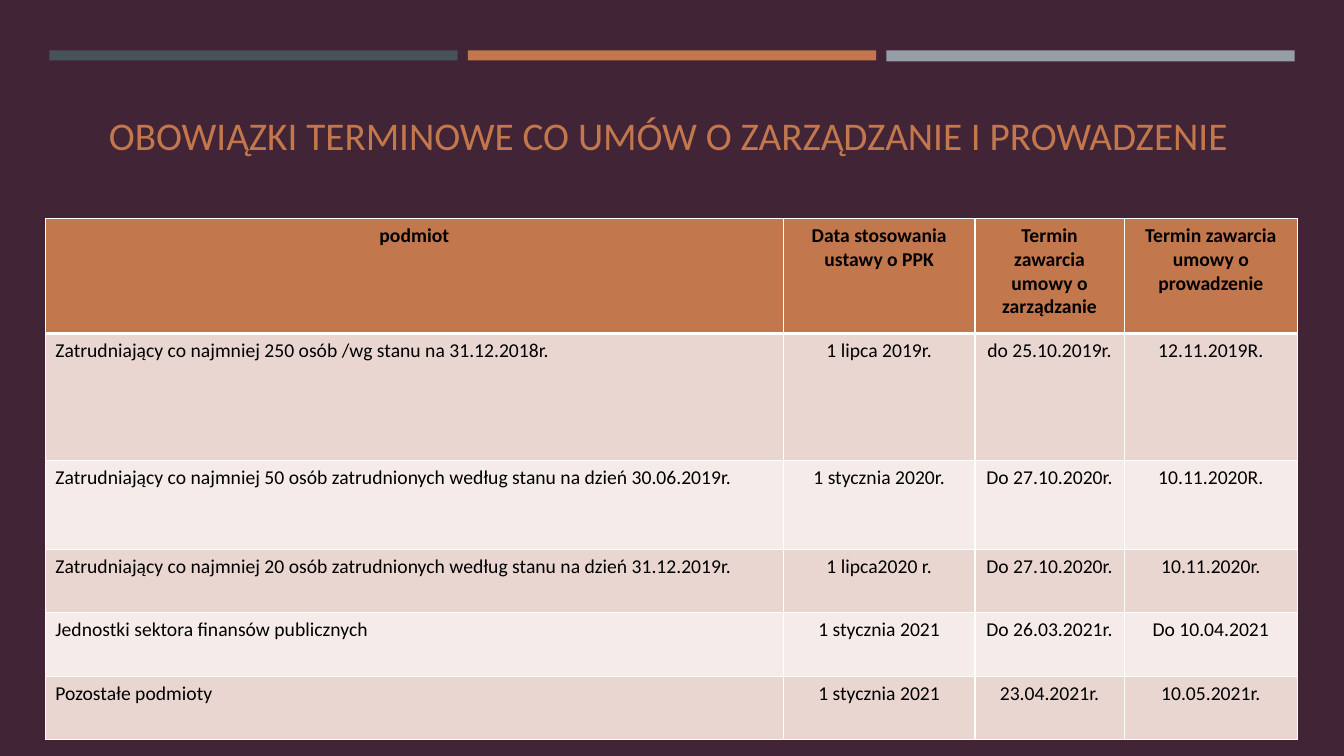
from dataclasses import dataclass

from lxml.etree import SubElement
from pptx import Presentation
from pptx.dml.color import RGBColor
from pptx.enum.shapes import MSO_SHAPE as Shape
from pptx.enum.text import MSO_ANCHOR as Anchor, PP_ALIGN as Align
from pptx.oxml.ns import qn
from pptx.util import Inches, Pt

PLUM = RGBColor(0x41, 0x24, 0x35)
TEAL = RGBColor(0x46, 0x53, 0x59)
RUST = RGBColor(0xC3, 0x77, 0x4D)
GREY = RGBColor(0x96, 0x9F, 0xA7)
ROSE = RGBColor(0xE9, 0xD6, 0xD0)
PALE = RGBColor(0xF5, 0xEC, 0xE9)
BLACK = RGBColor(0, 0, 0)
WHITE = RGBColor(0xFF, 0xFF, 0xFF)


@dataclass
class Bar:
    color: RGBColor
    height: float


@dataclass
class Row:
    height: float
    cells: tuple[str, ...]


BARS = [Bar(TEAL, 0.1), Bar(RUST, 0.1), Bar(GREY, 0.11)]
BAR_LEFT, BAR_TOP, BAR_WIDTH, BAR_STEP = 0.49, 0.5, 4.05, 4.15

COLS = [7.32, 1.9, 1.48, 1.72]
ROWS = [
    Row(1.14, ("podmiot", "Data stosowania ustawy o PPK",
               "Termin zawarcia umowy o zarządzanie",
               "Termin zawarcia umowy o prowadzenie")),
    Row(1.26, ("Zatrudniający co najmniej 250 osób /wg stanu na 31.12.2018r.",
               "1 lipca 2019r.", "do 25.10.2019r.", "12.11.2019R.")),
    Row(0.88, ("Zatrudniający co najmniej 50 osób zatrudnionych "
               "według stanu na dzień 30.06.2019r.",
               "1 stycznia 2020r.", "Do 27.10.2020r.", "10.11.2020R.")),
    Row(0.63, ("Zatrudniający co najmniej 20 osób zatrudnionych "
               "według stanu na dzień 31.12.2019r.",
               "1 lipca2020 r.", "Do 27.10.2020r.", "10.11.2020r.")),
    Row(0.63, ("Jednostki sektora finansów publicznych",
               "1 stycznia 2021", "Do 26.03.2021r.", "Do 10.04.2021")),
    Row(0.63, ("Pozostałe podmioty",
               "1 stycznia 2021", "23.04.2021r.", "10.05.2021r.")),
]


def write(frame, text: str, *, size: float, color: RGBColor,
          bold: bool = False, align=Align.CENTER) -> None:
    frame.word_wrap = True
    par = frame.paragraphs[0]
    par.alignment = align
    run = par.add_run()
    run.text = text
    font = run.font
    font.name, font.size, font.bold = "Calibri", Pt(size), bold
    font.color.rgb = color


def draw_bar(slide, bar: Bar, left: float) -> None:
    box = slide.shapes.add_shape(
        Shape.RECTANGLE, Inches(left), Inches(BAR_TOP),
        Inches(BAR_WIDTH), Inches(bar.height))
    box.shadow.inherit = False
    box.fill.solid()
    box.fill.fore_color.rgb = bar.color
    box.line.fill.background()


def set_edge(cell, side: str, width: float) -> None:
    line = SubElement(cell._tc.get_or_add_tcPr(), qn(f"a:ln{side}"),
                      w=str(Pt(width)))
    fill = SubElement(line, qn("a:solidFill"))
    SubElement(fill, qn("a:srgbClr"), val=str(WHITE))


def draw_table(slide, left: float, top: float) -> None:
    frame = slide.shapes.add_table(
        len(ROWS), len(COLS), Inches(left), Inches(top),
        Inches(sum(COLS)), Inches(sum(row.height for row in ROWS)))
    table = frame.table
    for col, width in zip(table.columns, COLS):
        col.width = Inches(width)
    for r, row in enumerate(ROWS):
        table.rows[r].height = Inches(row.height)
        head = r == 0
        for c, text in enumerate(row.cells):
            cell = table.cell(r, c)
            # Edges come before the fill in the cell's properties
            for side in "LRTB":
                thick = (head and side == "B") or (r == 1 and side == "T")
                set_edge(cell, side, 3 if thick else 1)
            cell.fill.solid()
            cell.fill.fore_color.rgb = RUST if head else ROSE if r % 2 else PALE
            write(cell.text_frame, text, size=14, color=BLACK, bold=head,
                  align=Align.CENTER if head or c else Align.LEFT)


def main() -> None:
    deck = Presentation()
    deck.slide_width, deck.slide_height = Inches(13.33), Inches(7.5)
    slide = deck.slides.add_slide(deck.slide_layouts[5])
    slide.background.fill.solid()
    slide.background.fill.fore_color.rgb = PLUM

    # Bars along the top
    for i, bar in enumerate(BARS):
        draw_bar(slide, bar, BAR_LEFT + i * BAR_STEP)

    # Title
    title = slide.shapes.title
    title.left, title.top = Inches(0.64), Inches(0.8)
    title.width, title.height = Inches(12.06), Inches(1.08)
    title.text_frame.vertical_anchor = Anchor.MIDDLE
    write(title.text_frame,
          "OBOWIĄZKI TERMINOWE CO UMÓW O ZARZĄDZANIE I PROWADZENIE ",
          size=28, color=RUST)

    # Deadlines
    draw_table(slide, 0.45, 2.17)
    deck.save("out.pptx")


if __name__ == "__main__":
    main()
